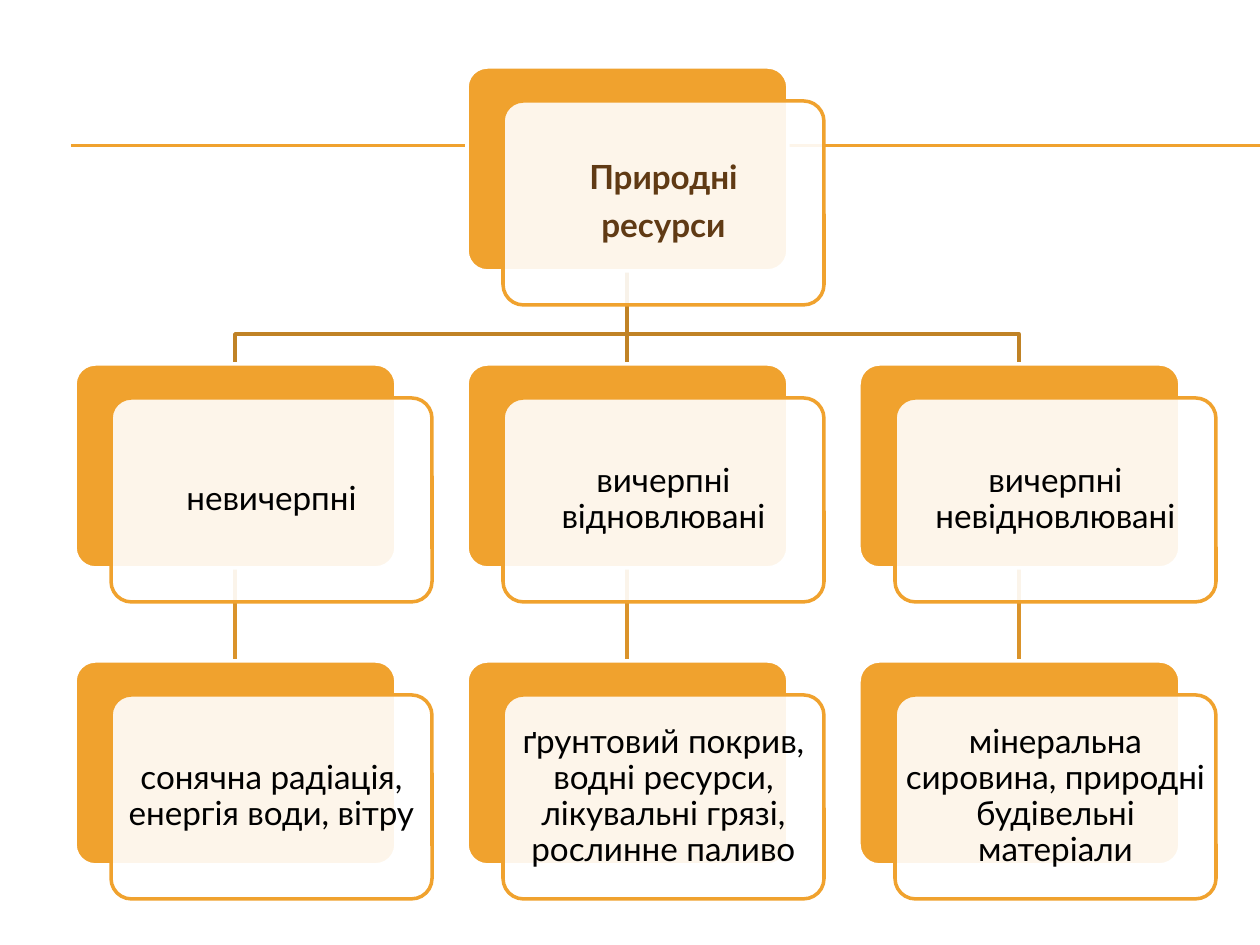
from dataclasses import dataclass

import lxml.etree
import pptx
import pptx.dml.color
import pptx.enum.shapes
import pptx.enum.text
import pptx.oxml.ns
import pptx.util

EMU_PER_PX = 914400 // 126
COLORS = {
    "accent": "F0A22E",
    "upper_link": "C08225",
    "lower_link": "DA932A",
    "white": "FFFFFF",
    "title": "603A14",
    "text": "000000",
}
FONT = "Lato"
LEFT, TOP = 75, 67
COLUMN_STEP, ROW_STEP = 392, 297
CARD_WIDTH, CARD_HEIGHT = 321, 204
FRONT_DX, FRONT_DY = 36, 34
BEND_GAP = 30


@dataclass(frozen=True)
class Card:
    column: int
    row: int
    lines: tuple[str, ...]
    color: str = "text"
    bold: bool = False

    @property
    def left(self) -> int:
        return LEFT + self.column * COLUMN_STEP

    @property
    def top(self) -> int:
        return TOP + self.row * ROW_STEP

    @property
    def center(self) -> int:
        return self.left + CARD_WIDTH // 2

    @property
    def bottom(self) -> int:
        return self.top + CARD_HEIGHT


ROOT = Card(1, 0, ("Природні", "ресурси"), color="title", bold=True)
BRANCHES = [
    (Card(0, 1, ("невичерпні",)),
     Card(0, 2, ("сонячна радіація, енергія води, вітру",))),
    (Card(1, 1, ("вичерпні відновлювані",)),
     Card(1, 2, ("ґрунтовий покрив, водні ресурси, лікувальні грязі, рослинне паливо",))),
    (Card(2, 1, ("вичерпні невідновлювані",)),
     Card(2, 2, ("мінеральна сировина, природні будівельні матеріали",))),
]


def px(length: int) -> pptx.util.Emu:
    return pptx.util.Emu(length * EMU_PER_PX)


def rgb(name: str) -> pptx.dml.color.RGBColor:
    return pptx.dml.color.RGBColor.from_string(COLORS[name])


def style_line(shape, color: str, width: float) -> None:
    shape.line.color.rgb = rgb(color)
    shape.line.width = pptx.util.Pt(width)


def draw_line(slide, start: tuple[int, int], end: tuple[int, int],
              color: str, width: float) -> None:
    connector = slide.shapes.add_connector(
        pptx.enum.shapes.MSO_CONNECTOR.STRAIGHT, *map(px, start + end))
    style_line(connector, color, width)
    lxml.etree.SubElement(connector._element.spPr, pptx.oxml.ns.qn("a:effectLst"))


def draw_link(slide, parent: Card, child: Card, color: str) -> None:
    """Join two cards, with a bend above the child when the columns differ."""
    start, end = (parent.center, parent.bottom), (child.center, child.top)
    if parent.column == child.column:
        draw_line(slide, start, end, color, 2)
        return
    bend = child.top - BEND_GAP
    builder = slide.shapes.build_freeform(*start, scale=EMU_PER_PX)
    builder.add_line_segments(
        [(parent.center, bend), (child.center, bend), end], close=False)
    shape = builder.convert_to_shape()
    shape.shadow.inherit = False
    shape.fill.background()
    style_line(shape, color, 2)


def draw_box(slide, left: int, top: int, fill: str, line: str):
    shape = slide.shapes.add_shape(
        pptx.enum.shapes.MSO_SHAPE.ROUNDED_RECTANGLE,
        px(left), px(top), px(CARD_WIDTH), px(CARD_HEIGHT))
    shape.adjustments[0] = 0.1
    shape.shadow.inherit = False
    shape.fill.solid()
    shape.fill.fore_color.rgb = rgb(fill)
    style_line(shape, line, 2)
    return shape


def set_opacity(shape, percent: int) -> None:
    color = shape._element.spPr.find(
        f"{pptx.oxml.ns.qn('a:solidFill')}/{pptx.oxml.ns.qn('a:srgbClr')}")
    alpha = lxml.etree.SubElement(color, pptx.oxml.ns.qn("a:alpha"))
    alpha.set("val", str(percent * 1000))


def write_text(shape, lines: tuple[str, ...], *, color: str, bold: bool,
               size: int = 19, inset: int = 3) -> None:
    frame = shape.text_frame
    frame.word_wrap = True
    frame.vertical_anchor = pptx.enum.text.MSO_ANCHOR.MIDDLE
    frame.margin_left = frame.margin_right = px(inset)
    frame.margin_top = frame.margin_bottom = px(inset)
    frame.text = "\n".join(lines)
    for paragraph in frame.paragraphs:
        paragraph.alignment = pptx.enum.text.PP_ALIGN.CENTER
        paragraph.line_spacing = 0.9
        paragraph.space_after = pptx.util.Pt(size * 0.35)
        font = paragraph.runs[0].font
        font.name = FONT
        font.size = pptx.util.Pt(size)
        font.bold = bold
        font.color.rgb = rgb(color)


def draw_card(slide, card: Card) -> None:
    draw_box(slide, card.left, card.top, "accent", "white")
    front = draw_box(slide, card.left + FRONT_DX, card.top + FRONT_DY, "white", "accent")
    set_opacity(front, 90)
    write_text(front, card.lines, color=card.color, bold=card.bold)


def main() -> None:
    presentation = pptx.Presentation()
    presentation.slide_width, presentation.slide_height = px(1260), px(945)
    slide = presentation.slides.add_slide(presentation.slide_layouts[6])

    for rule_y in (145, 146):
        draw_line(slide, (71, rule_y), (1260, rule_y), "accent", 0.75)
    for kind, example in BRANCHES:
        draw_link(slide, kind, example, "lower_link")
        draw_link(slide, ROOT, kind, "upper_link")
    draw_card(slide, ROOT)
    for branch in BRANCHES:
        for card in branch:
            draw_card(slide, card)

    presentation.save("out.pptx")


if __name__ == "__main__":
    main()
